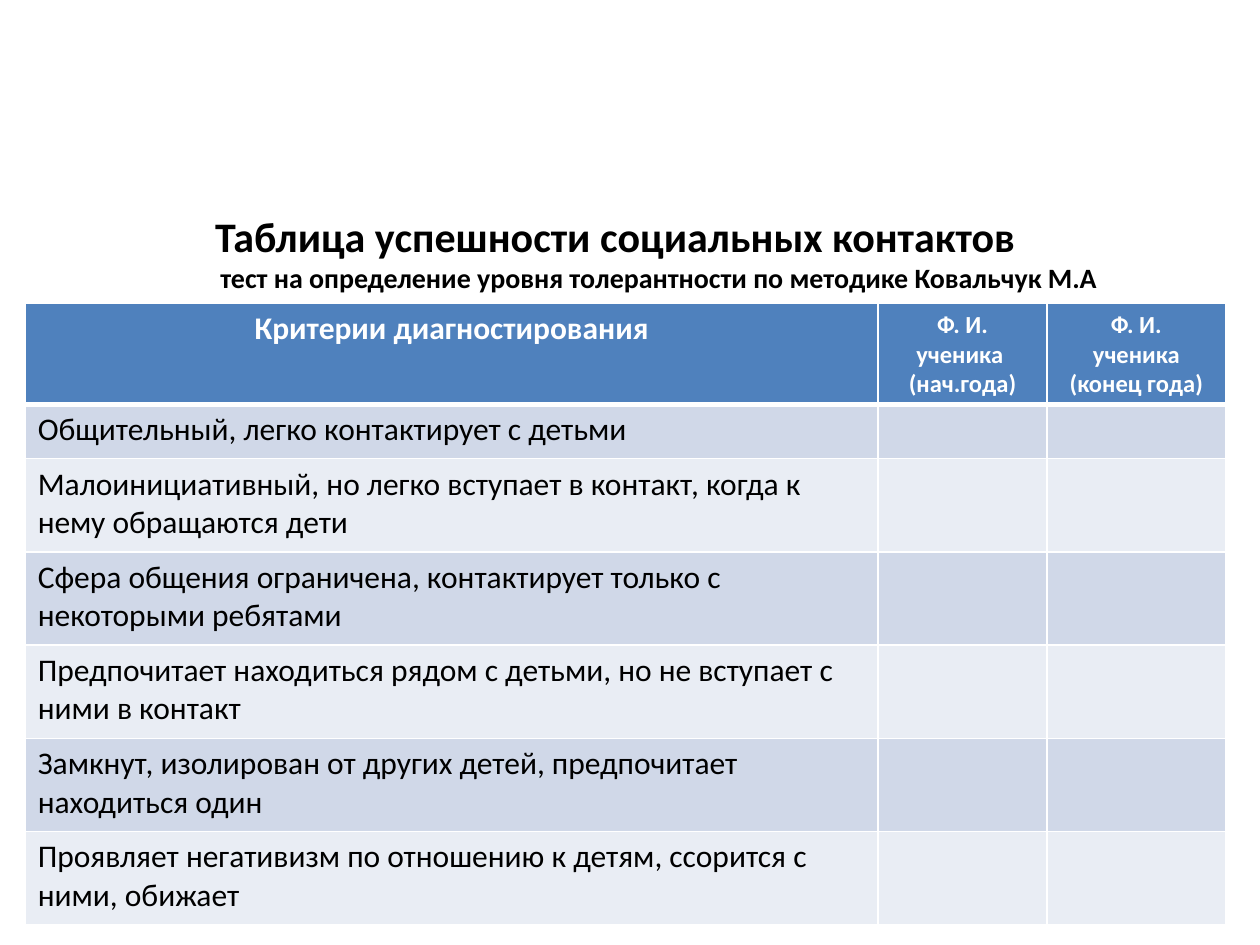
from lxml import etree
from pptx import Presentation
from pptx.dml.color import RGBColor
from pptx.enum import text as t
from pptx.oxml.ns import qn
from pptx.util import Inches, Pt

FONT = "Calibri"
WHITE, BLACK, BLUE = "FFFFFF", "000000", "4F81BD"
BANDS = ["D0D8E8", "E9EDF4"]
LEFT, MID = t.PP_ALIGN.LEFT, t.PP_ALIGN.CENTER
COLS = [6.77, 1.34, 1.42]
ROWS = [0.79, 0.43] + [0.74] * 5
HEADS = [
    (["Критерии диагностирования"], 18),
    (["Ф. И.", "ученика ", "(нач.года)"], 14),
    (["Ф. И.", "ученика", "(конец года)"], 14),
]
TRAITS = [
    "Общительный, легко контактирует с детьми",
    "Малоинициативный, но легко вступает в контакт, когда к нему обращаются дети",
    "Сфера общения ограничена, контактирует только с некоторыми ребятами",
    "Предпочитает находиться рядом с детьми, но не вступает с ними в контакт",
    "Замкнут, изолирован от других детей, предпочитает находиться один",
    "Проявляет негативизм по отношению к детям, ссорится с ними, обижает",
]


def paint(code):
    """Turn a hex string into a colour."""
    return RGBColor.from_string(code)


def write(frame, lines, color, bold):
    """Fill a text frame with (words, size, alignment) lines."""
    for i, (words, size, align) in enumerate(lines):
        para = frame.add_paragraph() if i else frame.paragraphs[0]
        para.alignment = align
        run = para.add_run()
        run.text = words
        font = run.font
        font.name, font.size, font.bold = FONT, Pt(size), bold
        font.color.rgb = paint(color)


def edge(cell, side, width):
    """Draw one white border of a cell."""
    props = cell._tc.get_or_add_tcPr()
    line = etree.SubElement(props, qn(f"a:ln{side}"), w=str(Pt(width)))
    fill = etree.SubElement(line, qn("a:solidFill"))
    etree.SubElement(fill, qn("a:srgbClr"), val=WHITE)


def style(cell, color, top, base):
    """Give a cell its borders and fill."""
    for side, width in zip("LRTB", (1, 1, top, base)):
        edge(cell, side, width)
    cell.fill.solid()
    cell.fill.fore_color.rgb = paint(color)


def add_title(slide):
    """Add the heading above the table."""
    box = slide.shapes.add_textbox(
        Inches(1.61), Inches(1.62), Inches(7.24), Inches(1.11))
    box.text_frame.word_wrap = True
    write(box.text_frame, [
        ("Таблица успешности социальных контактов", 24, LEFT),
        ("тест на определение уровня толерантности по методике Ковальчук М.А", 16, MID),
    ], BLACK, True)


def add_grid(slide):
    """Add the table of traits."""
    grid = slide.shapes.add_table(
        len(ROWS), len(COLS), Inches(0.2), Inches(2.41),
        Inches(sum(COLS)), Inches(sum(ROWS))).table
    for col, width in zip(grid.columns, COLS):
        col.width = Inches(width)
    for i, (row, height) in enumerate(zip(grid.rows, ROWS)):
        row.height = Inches(height)
        for cell in row.cells:
            style(cell, BANDS[(i - 1) % 2] if i else BLUE,
                  3 if i == 1 else 1, 1 if i else 3)
    for j, (lines, size) in enumerate(HEADS):
        write(grid.cell(0, j).text_frame,
              [(words, size, MID) for words in lines], WHITE, True)
    for i, trait in enumerate(TRAITS, 1):
        write(grid.cell(i, 0).text_frame, [(trait, 18, LEFT)], BLACK, False)


def main():
    """Build and save the slide."""
    deck = Presentation()
    deck.slide_width, deck.slide_height = Inches(10), Inches(7.5)
    slide = deck.slides.add_slide(deck.slide_layouts[6])
    add_title(slide)
    add_grid(slide)
    deck.save("out.pptx")


if __name__ == "__main__":
    main()
